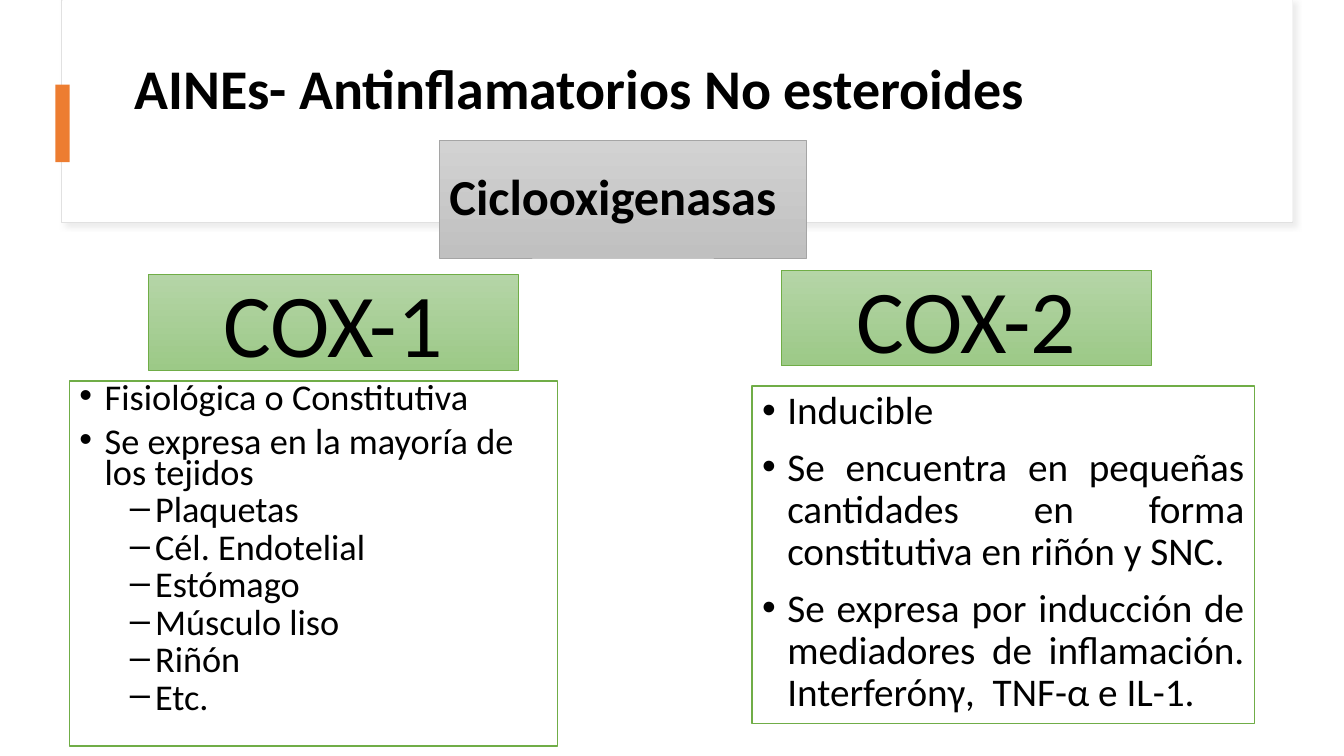
from dataclasses import dataclass

import lxml.etree
import pptx
import pptx.dml.color
import pptx.enum.shapes
import pptx.enum.text
import pptx.oxml.ns
import pptx.util

ALIGN = pptx.enum.text.PP_ALIGN
ANCHOR = pptx.enum.text.MSO_ANCHOR
Inches = pptx.util.Inches
qn = pptx.oxml.ns.qn


@dataclass(frozen=True)
class Theme:
    font: str = "Calibri"
    ink: str = "000000"
    paper: str = "FFFFFF"
    edge: str = "E1E1E1"
    shade: str = "D9D9D9"
    accent: str = "ED7D31"
    gray: str = "A5A5A5"
    green: str = "70AD47"
    silver: tuple = ("D2D2D2", "C0C0C0")
    leaf: tuple = ("B5D5A7", "9CC987")
    title: float = 40
    head: float = 36
    label: float = 64
    dense: float = 25.9
    body: float = 28


@dataclass(frozen=True)
class Box:
    left: float
    top: float
    width: float
    height: float


@dataclass(frozen=True)
class Item:
    text: str
    level: int = 0


@dataclass(frozen=True)
class Column:
    name: str
    label: Box
    panel: Box
    size: float
    pitch: float
    align: ALIGN
    items: tuple


THEME = Theme()

COLUMNS = (
    Column("COX-1", Box(1.47, 2.72, 3.67, 0.95), Box(0.69, 3.78, 4.84, 3.62),
           THEME.dense, 0.7, ALIGN.LEFT, (
               Item("Fisiológica o Constitutiva"),
               Item("Se expresa en la mayoría de los tejidos"),
               Item("Plaquetas", 1),
               Item("Cél. Endotelial", 1),
               Item("Estómago", 1),
               Item("Músculo liso", 1),
               Item("Riñón", 1),
               Item("Etc.", 1))),
    Column("COX-2", Box(7.75, 2.68, 3.67, 0.95), Box(7.46, 3.83, 4.98, 3.35),
           THEME.body, 0.9, ALIGN.JUSTIFY, (
               Item("Inducible"),
               Item("Se encuentra en pequeñas cantidades en forma "
                    "constitutiva en riñón y SNC."),
               Item("Se expresa por inducción de mediadores de inflamación. "
                    "Interferónγ,  TNF-α e IL-1."))),
)


def color(code: str) -> pptx.dml.color.RGBColor:
    return pptx.dml.color.RGBColor.from_string(code)


def place(shape, box: Box) -> None:
    shape.left, shape.top = Inches(box.left), Inches(box.top)
    shape.width, shape.height = Inches(box.width), Inches(box.height)


def add_rect(slide, box: Box, fill, line: str = "", weight: float = 1):
    """Draw a rectangle; a pair of colours gives a top-down gradient."""
    shape = slide.shapes.add_shape(
        pptx.enum.shapes.MSO_SHAPE.RECTANGLE, 0, 0, 0, 0)
    place(shape, box)
    shape.shadow.inherit = False
    if isinstance(fill, tuple):
        shape.fill.gradient()
        shape.fill.gradient_angle = 270
        for stop, code in zip(shape.fill.gradient_stops, fill):
            stop.color.rgb = color(code)
    else:
        shape.fill.solid()
        shape.fill.fore_color.rgb = color(fill)
    if line:
        shape.line.color.rgb = color(line)
        shape.line.width = pptx.util.Pt(weight)
    else:
        shape.line.fill.background()
    return shape


def add_shadow(shape, code: str) -> None:
    effects = shape.element.spPr.find(qn("a:effectLst"))
    outer = lxml.etree.SubElement(
        effects, qn("a:outerShdw"), blurRad=str(pptx.util.Pt(4)),
        dist=str(pptx.util.Pt(3)), dir=str(45 * 60000), algn="tl",
        rotWithShape="0")
    tint = lxml.etree.SubElement(outer, qn("a:srgbClr"), val=code)
    lxml.etree.SubElement(tint, qn("a:alpha"), val="50000")


def add_bullet(para, level: int) -> None:
    para.level = level
    props = para._p.get_or_add_pPr()
    props.set("marL", str(Inches(0.25 + 0.5 * level)))
    props.set("indent", str(Inches(-0.25)))
    lxml.etree.SubElement(props, qn("a:buFont"), typeface="Arial")
    lxml.etree.SubElement(props, qn("a:buChar"), char="•–"[level])


def write(shape, text: str, *, size: float, bold: bool = False,
          align: ALIGN = ALIGN.LEFT, anchor: ANCHOR = ANCHOR.MIDDLE,
          pitch: float = 1.0, before: float = 0, more: bool = False):
    """Put one paragraph in a shape; more adds it after the last one."""
    frame = shape.text_frame
    frame.word_wrap = True
    frame.auto_size = pptx.enum.text.MSO_AUTO_SIZE.NONE
    frame.vertical_anchor = anchor
    para = frame.add_paragraph() if more else frame.paragraphs[0]
    para.alignment = align
    para.line_spacing = pitch
    para.space_before = pptx.util.Pt(before)
    run = para.add_run()
    run.text = text
    run.font.name = THEME.font
    run.font.size = pptx.util.Pt(size)
    run.font.bold = bold
    run.font.color.rgb = color(THEME.ink)
    return para


def add_column(slide, col: Column) -> None:
    label = add_rect(slide, col.label, THEME.leaf, THEME.green, 0.5)
    write(label, col.name, size=THEME.label, align=ALIGN.CENTER,
          before=THEME.label * 0.2)
    panel = add_rect(slide, col.panel, THEME.paper, THEME.green)
    for index, item in enumerate(col.items):
        para = write(panel, item.text, size=col.size, align=col.align,
                     anchor=ANCHOR.TOP, pitch=col.pitch,
                     before=5 if item.level else 10, more=index > 0)
        add_bullet(para, item.level)


def main() -> None:
    deck = pptx.Presentation()
    deck.slide_width, deck.slide_height = Inches(13.33), Inches(7.5)
    slide = deck.slides.add_slide(deck.slide_layouts.get_by_name("Title Only"))

    # Header panel
    back = add_rect(slide, Box(0.61, 0, 12.21, 2.21), THEME.paper, THEME.edge)
    add_shadow(back, THEME.shade)
    front = add_rect(slide, Box(0.62, 0, 12.2, 2.2), THEME.paper)

    # Title, in front of the panel
    title = slide.shapes.title
    place(title, Box(1.11, 0.32, 9.72, 1.17))
    write(title, " AINEs- Antinflamatorios No esteroides",
          size=THEME.title, bold=True, pitch=0.9)
    front.element.addnext(title.element)
    add_rect(slide, Box(0.55, 0.84, 0.14, 0.77), THEME.accent)

    # Enzyme family and its two members
    head = add_rect(slide, Box(4.36, 1.39, 3.64, 1.17), THEME.silver,
                    THEME.gray, 0.5)
    write(head, "Ciclooxigenasas", size=THEME.head, bold=True, pitch=0.9)
    for col in COLUMNS:
        add_column(slide, col)

    deck.save("out.pptx")


if __name__ == "__main__":
    main()
